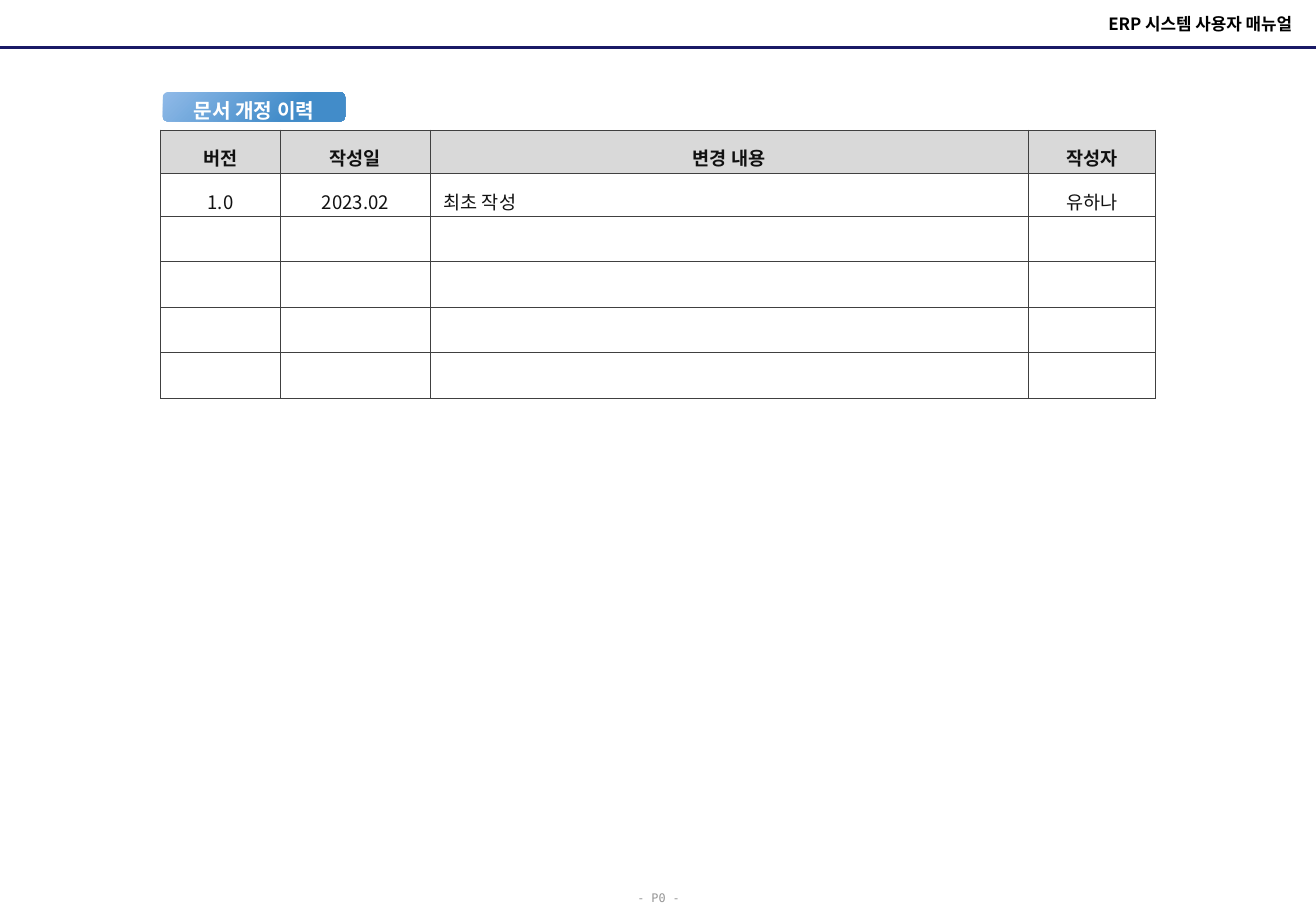
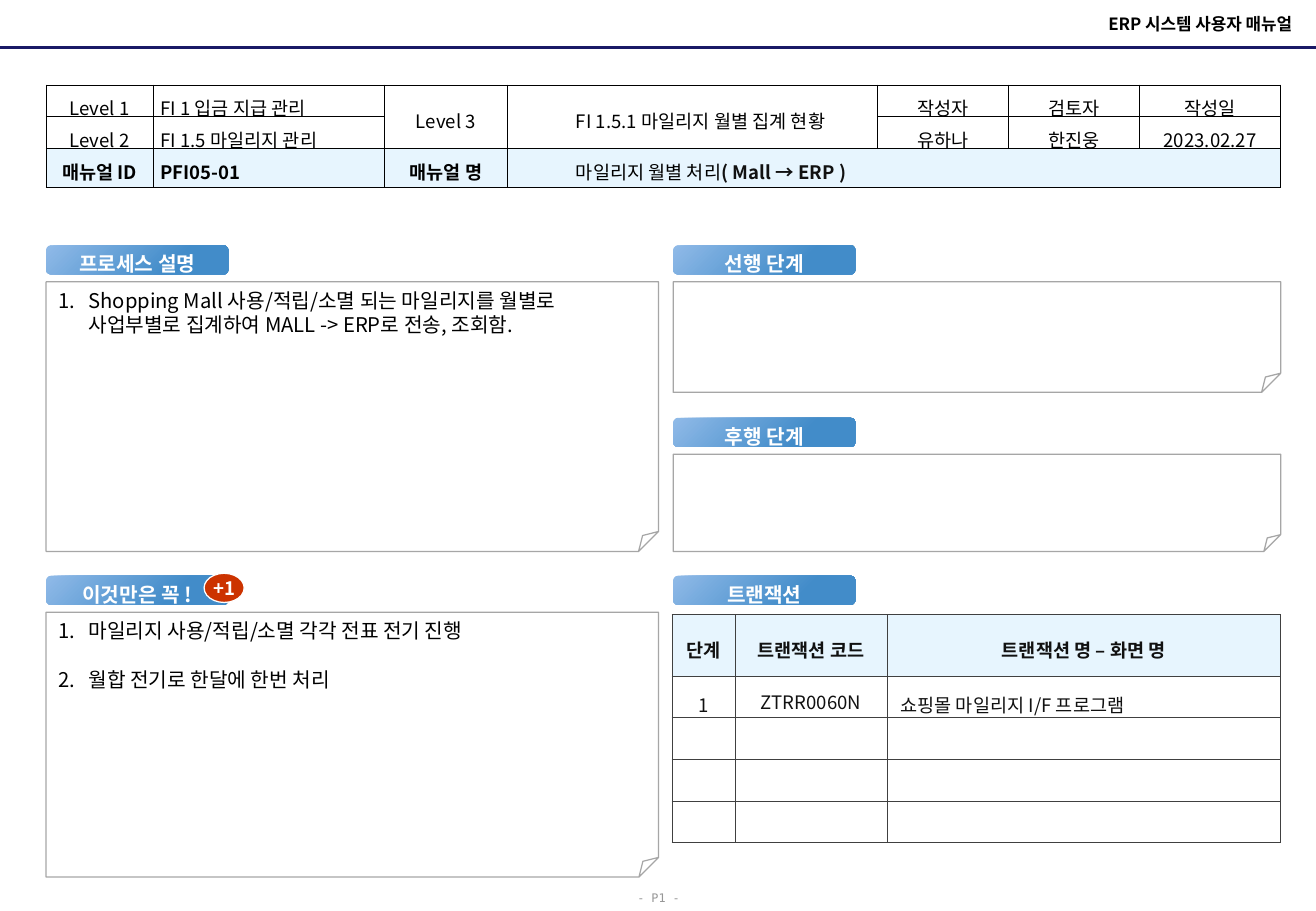
import pptx
import pptx.util
import pptx.dml.color
import pptx.enum.shapes
import pptx.enum.text
import pptx.oxml.ns
import lxml.etree

RGB = pptx.dml.color.RGBColor
Pt = pptx.util.Pt
qn = pptx.oxml.ns.qn
SHAPE = pptx.enum.shapes.MSO_SHAPE
ALIGN = pptx.enum.text.PP_ALIGN
ANCHOR = pptx.enum.text.MSO_ANCHOR

PX = 9144
WIDE, HIGH = 1083, 750
SANS = "Noto Sans CJK KR"
MONO = "DejaVu Sans Mono"
BLACK = RGB(0x00, 0x00, 0x00)
WHITE = RGB(0xFF, 0xFF, 0xFF)
INK = RGB(0x11, 0x11, 0x11)
NAVY = RGB(0x19, 0x19, 0x66)
GRAY = RGB(0x96, 0x96, 0x96)
EDGE = RGB(0xA6, 0xA6, 0xA6)
GRID = RGB(0x40, 0x40, 0x40)
HEAD = RGB(0xD9, 0xD9, 0xD9)
PALE = RGB(0xE7, 0xF5, 0xFE)
SKY = RGB(0x90, 0xBA, 0xE8)
BLUE = RGB(0x42, 0x8C, 0xC9)
RED = RGB(0xCC, 0x33, 0x00)

TITLE = "ERP 시스템 사용자 매뉴얼"

LOG = dict(
    at=(132, 107), cols=(99, 123, 492, 105), rows=(36, 35, 37, 38, 37, 38),
    text=[("버전", "작성일", "변경 내용", "작성자"),
          ("1.0", "2023.02", "최초 작성", "유하나")],
    left={(1, 2)}, key=0, tint=HEAD, edge=GRID, ink=INK, pad=(11, 5))

META = dict(
    at=(38, 70), cols=(88, 190, 102, 304, 108, 108, 116), rows=(26, 26, 32),
    text=[("Level 1", "FI 1 입금 지급 관리", "Level 3",
           "FI 1.5.1 마일리지 월별 집계 현황", "작성자", "검토자", "작성일"),
          ("Level 2", "FI 1.5 마일리지 관리", "", "",
           "유하나", "한진웅", "2023.02.27"),
          ("매뉴얼 ID", "PFI05-01", "매뉴얼 명", "마일리지 월별 처리")],
    left={(0, 1), (1, 1), (2, 1), (0, 3), (2, 3)},
    key=2, tint=PALE, edge=BLACK, ink=BLACK, pad=(6, 1))
FLOW = "( Mall → ERP )"
SPANS = [((0, 2), (1, 2)), ((0, 3), (1, 3)), ((2, 3), (2, 6))]

CODES = dict(
    at=(553, 506), cols=(52, 125, 324), rows=(51, 34, 34, 35, 34),
    text=[("단계", "트랜잭션 코드", "트랜잭션 명 – 화면 명"),
          ("1", "ZTRR0060N", "쇼핑몰 마일리지 I/F 프로그램")],
    left={(1, 2)}, key=0, tint=PALE, edge=GRID, ink=INK, pad=(11, 5))

TAGS = [("프로세스 설명", 38, 202), ("선행 단계", 554, 202),
        ("후행 단계", 554, 344), ("트랜잭션", 554, 474),
        ("이것만은 꼭 !", 38, 474)]

NOTES = [
    ((38, 232, 504, 222), 7400,
     ["Shopping Mall 사용/적립/소멸 되는 마일리지를 월별로 "
      "사업부별로 집계하여 MALL -> ERP로 전송, 조회함."]),
    ((554, 232, 500, 91), 17300, []),
    ((554, 374, 500, 80), 17300, []),
    ((38, 504, 504, 218), 7400,
     ["마일리지 사용/적립/소멸 각각 전표 전기 진행",
      "월합 전기로 한달에 한번 처리"]),
]


def px(*nums):
    return [n * PX for n in nums]


def sub(node, tag, **attrs):
    return lxml.etree.SubElement(node, qn(tag), **attrs)


def style(run, size, color, bold=False, face=SANS):
    font = run.font
    font.size, font.bold, font.name = Pt(size), bold, face
    font.color.rgb = color
    sub(run._r.get_or_add_rPr(), "a:ea", typeface=face)


def put(frame, text, size, color, bold=False, face=SANS,
        align=ALIGN.CENTER, space=None):
    frame.text = text
    for para in frame.paragraphs:
        para.alignment = align
        para.line_spacing = space
        for run in para.runs:
            style(run, size, color, bold, face)


def pad(box, left, top, right, base):
    box.margin_left, box.margin_top = px(left, top)
    box.margin_right, box.margin_bottom = px(right, base)


def indent(para, left, hang):
    props = para._p.get_or_add_pPr()
    props.set("marL", str(left * PX))
    props.set("indent", str(hang * PX))
    return props


def label(slide, at, text, size, color, wrap=True, **kw):
    frame = slide.shapes.add_textbox(*px(*at)).text_frame
    frame.word_wrap = wrap
    frame.vertical_anchor = ANCHOR.MIDDLE
    put(frame, text, size, color, **kw)


def shape(slide, kind, at):
    item = slide.shapes.add_shape(kind, *px(*at))
    item.shadow.inherit = False
    return item


def start(deck, page):
    slide = deck.slides.add_slide(deck.slide_layouts[6])
    rule = slide.shapes.add_connector(
        pptx.enum.shapes.MSO_CONNECTOR.STRAIGHT, *px(0, 39, WIDE, 39))
    rule.line.color.rgb, rule.line.width = NAVY, Pt(1.5)
    sub(rule._element.spPr, "a:effectLst")
    label(slide, (514, 725, 56, 25), page, 7, GRAY, wrap=False,
          face=MONO, space=1.3)
    label(slide, (604, 6, 469, 27), TITLE, 10, BLACK, bold=True,
          align=ALIGN.RIGHT)
    return slide


def tag(slide, text, x, y):
    item = shape(slide, SHAPE.ROUNDED_RECTANGLE, (x, y, 150, 24))
    item.line.fill.background()
    item.fill.gradient()
    item.fill.gradient_angle = 315
    for stop, color, spot in zip(item.fill.gradient_stops,
                                 (SKY, BLUE), (0, 0.7)):
        stop.color.rgb, stop.position = color, spot
    frame = item.text_frame
    pad(frame, 0, 0, 0, 4)
    put(frame, text, 12, WHITE, bold=True, space=1.5)
    indent(frame.paragraphs[0], 10, -10)


def note(slide, at, fold, lines):
    item = shape(slide, SHAPE.FOLDED_CORNER, at)
    geom = item._element.spPr.find(qn("a:prstGeom"))
    for old in list(geom):
        geom.remove(old)
    sub(sub(geom, "a:avLst"), "a:gd", name="adj", fmla=f"val {fold}")
    item.fill.background()
    item.line.color.rgb, item.line.width = EDGE, Pt(0.75)
    if not lines:
        return
    frame = item.text_frame
    frame.vertical_anchor = ANCHOR.TOP
    put(frame, "\n".join(lines), 12, BLACK, align=ALIGN.LEFT)
    for i, para in enumerate(frame.paragraphs):
        if i:
            para.space_before = Pt(14.4)
        sub(indent(para, 25, -25), "a:buAutoNum", type="arabicPeriod")


def border(cell, color):
    props = cell._tc.get_or_add_tcPr()
    for side in ("a:lnL", "a:lnR", "a:lnT", "a:lnB"):
        line = sub(props, side, w=str(int(Pt(0.5))))
        sub(sub(line, "a:solidFill"), "a:srgbClr", val=str(color))


def grid(slide, data):
    cols, rows, text = data["cols"], data["rows"], data["text"]
    table = slide.shapes.add_table(
        len(rows), len(cols),
        *px(*data["at"], sum(cols), sum(rows))).table
    table.first_row = table.horz_banding = False
    for col, size in zip(table.columns, cols):
        col.width = size * PX
    for r, row in enumerate(table.rows):
        row.height = rows[r] * PX
        words = text[r] if r < len(text) else ()
        key = r == data["key"]
        for c, cell in enumerate(row.cells):
            border(cell, data["edge"])
            cell.fill.solid()
            cell.fill.fore_color.rgb = data["tint"] if key else WHITE
            cell.vertical_anchor = ANCHOR.MIDDLE
            pad(cell, *data["pad"] * 2)
            word = words[c] if c < len(words) else ""
            if word:
                side = ALIGN.LEFT if (r, c) in data["left"] else ALIGN.CENTER
                put(cell.text_frame, word, 11, data["ink"], bold=key,
                    align=side, space=1.3)
            else:
                sub(cell.text_frame.paragraphs[0]._p, "a:endParaRPr",
                    sz="1100")
    return table


def badge(slide):
    item = shape(slide, SHAPE.OVAL, (168, 472, 33, 24))
    item.fill.solid()
    item.fill.fore_color.rgb = RED
    item.line.color.rgb, item.line.width = WHITE, Pt(0.75)
    item.text_frame.word_wrap = False
    put(item.text_frame, "+1", 11, WHITE, bold=True)


def history(deck):
    slide = start(deck, "- P0 -")
    grid(slide, LOG)
    tag(slide, "문서 개정 이력", 134, 76)


def manual(deck):
    slide = start(deck, "- P1 -")
    codes = grid(slide, CODES)
    pad(codes.cell(1, 1), 0, 0, 0, 0)
    for item in TAGS:
        tag(slide, *item)
    for item in NOTES:
        note(slide, *item)
    badge(slide)
    meta = grid(slide, META)
    for first, last in SPANS:
        meta.cell(*first).merge(meta.cell(*last))
    for r in (0, 2):
        para = meta.cell(r, 3).text_frame.paragraphs[0]
        indent(para, 50, 0)
        para.runs[0].font.bold = False
    run = para.add_run()
    run.text = FLOW
    style(run, 11, INK, bold=True)


def main():
    deck = pptx.Presentation()
    deck.slide_width, deck.slide_height = px(WIDE, HIGH)
    history(deck)
    manual(deck)
    deck.save("out.pptx")


if __name__ == "__main__":
    main()
